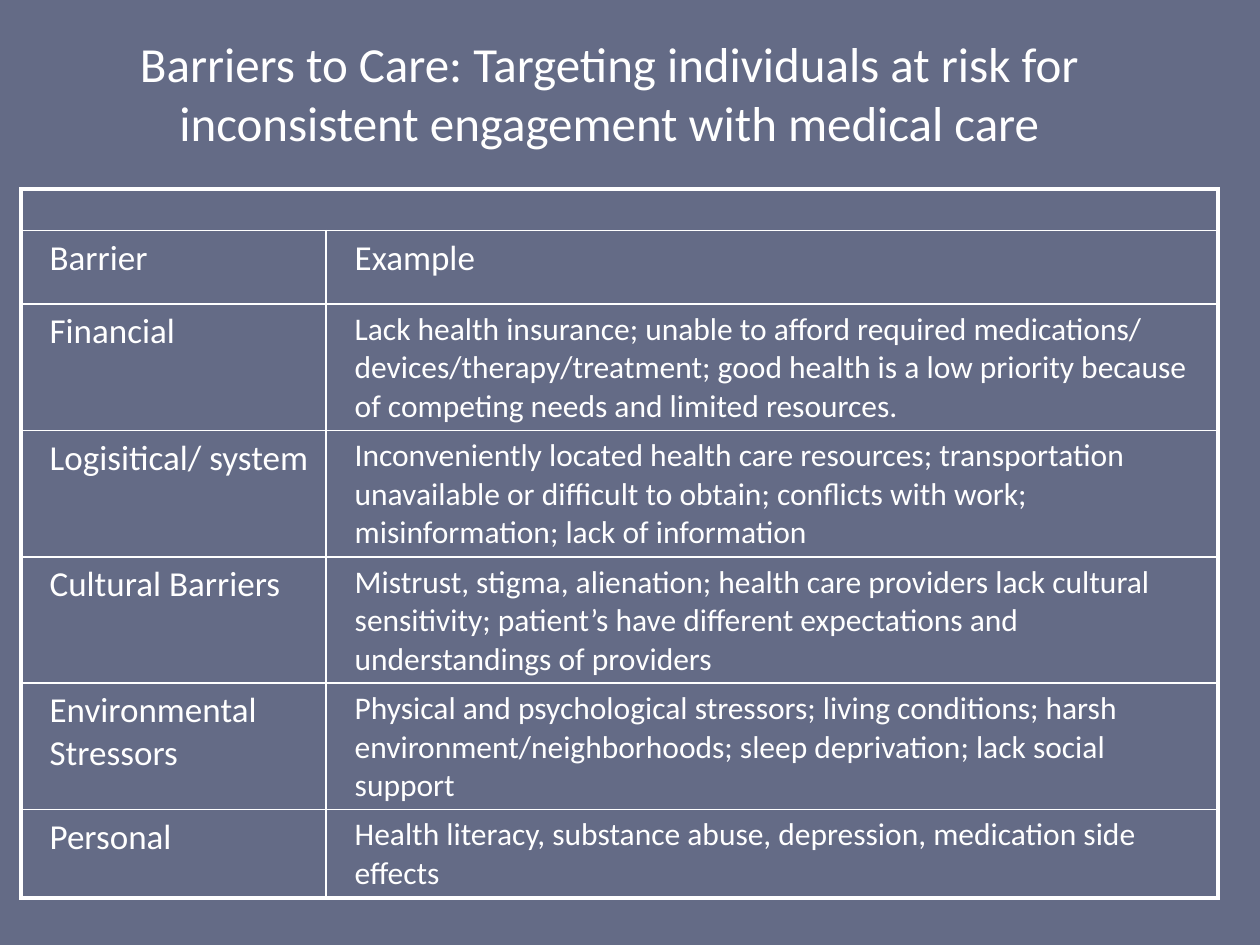
from dataclasses import dataclass

from lxml import etree
from pptx import Presentation
from pptx.dml.color import RGBColor
from pptx.enum.text import MSO_ANCHOR, PP_ALIGN
from pptx.oxml.ns import qn
from pptx.util import Cm, Pt

BOTTOM = MSO_ANCHOR.BOTTOM
TOP = MSO_ANCHOR.TOP
CENTER = PP_ALIGN.CENTER
LEFT = PP_ALIGN.LEFT


@dataclass(frozen=True)
class Theme:
    back: str = "646B86"
    ink: str = "FFFFFF"
    font: str = "Calibri"
    title: int = 28
    label: int = 20
    body: int = 18
    thick: float = 2.25
    thin: float = 1


THEME = Theme()
TITLE = ("Barriers to Care: Targeting individuals at risk for "
         "inconsistent engagement with medical care")
HEADS = ("Barrier", "Example")
ROWS = [
    ("Financial",
     "Lack health insurance; unable to afford required medications/ "
     "devices/therapy/treatment; good health is a low priority because "
     "of competing needs and limited resources."),
    ("Logisitical/ system",
     "Inconveniently located health care resources; transportation "
     "unavailable or difficult to obtain; conflicts with work; "
     "misinformation; lack of information"),
    ("Cultural Barriers",
     "Mistrust, stigma, alienation; health care providers lack cultural "
     "sensitivity; patient’s have different expectations and "
     "understandings of providers"),
    ("Environmental Stressors",
     "Physical and psychological stressors; living conditions; harsh "
     "environment/neighborhoods; sleep deprivation; lack social support"),
    ("Personal",
     "Health literacy, substance abuse, depression, medication side effects"),
]
WIDTHS = (6.15, 17.98)
HEIGHTS = (0.84, 1.48, *[2.54] * 4, 1.78)


def style(item, values):
    for name, value in values.items():
        setattr(item, name, value)


def write(frame, text, size, align=LEFT):
    para = frame.paragraphs[0]
    para.alignment = align
    run = para.add_run()
    run.text = text
    style(run.font, {"name": THEME.font, "size": Pt(size)})
    run.font.color.rgb = RGBColor.from_string(THEME.ink)
    return para


def add_title(slide):
    box = slide.shapes.add_textbox(Cm(0.85), Cm(0.42), Cm(22.86), Cm(2.75))
    frame = box.text_frame
    style(frame, {"word_wrap": True, "vertical_anchor": BOTTOM})
    write(frame, TITLE, THEME.title, CENTER)


def add_edge(cell, side, width):
    props = cell._tc.get_or_add_tcPr()
    line = etree.SubElement(props, qn(f"a:ln{side}"), w=str(Pt(width)))
    fill = etree.SubElement(line, qn("a:solidFill"))
    etree.SubElement(fill, qn("a:srgbClr"), val=THEME.ink)


def frame_cell(cell, row, col):
    outer = {
        "L": col == 0,
        "R": col == len(WIDTHS) - 1 or row == 0,
        "T": row == 0,
        "B": row == len(HEIGHTS) - 1,
    }
    for side, edge in outer.items():
        add_edge(cell, side, THEME.thick if edge else THEME.thin)
    cell.fill.background()


def fill_cell(cell, text, size):
    style(cell, {
        "margin_left": Cm(0.25), "margin_right": Cm(0.25),
        "margin_top": Cm(0.13), "margin_bottom": Cm(0.13),
        "vertical_anchor": TOP,
    })
    para = write(cell.text_frame, text, size)
    para._p.get_or_add_pPr().set("marL", str(Cm(0.33)))


def add_grid(slide):
    shape = slide.shapes.add_table(
        len(HEIGHTS), len(WIDTHS), Cm(0.42), Cm(3.81),
        Cm(sum(WIDTHS)), Cm(sum(HEIGHTS)))
    table = shape.table
    style(table, {"first_row": False, "horz_banding": False})
    for col, width in zip(table.columns, WIDTHS):
        col.width = Cm(width)
    for row, height in zip(table.rows, HEIGHTS):
        row.height = Cm(height)
    for row in range(len(HEIGHTS)):
        for col in range(len(WIDTHS)):
            frame_cell(table.cell(row, col), row, col)
    banner = table.cell(0, 0)
    banner.merge(table.cell(0, 1))
    style(banner, {"margin_top": 0, "margin_bottom": 0})
    for row, texts in enumerate([HEADS, *ROWS], 1):
        sizes = (THEME.label, THEME.label if row == 1 else THEME.body)
        for col, (text, size) in enumerate(zip(texts, sizes)):
            fill_cell(table.cell(row, col), text, size)


def main():
    deck = Presentation()
    style(deck, {"slide_width": Cm(25.4), "slide_height": Cm(19.05)})
    slide = deck.slides.add_slide(deck.slide_layouts[6])
    fill = slide.background.fill
    fill.solid()
    fill.fore_color.rgb = RGBColor.from_string(THEME.back)
    add_title(slide)
    add_grid(slide)
    deck.save("out.pptx")


if __name__ == "__main__":
    main()
